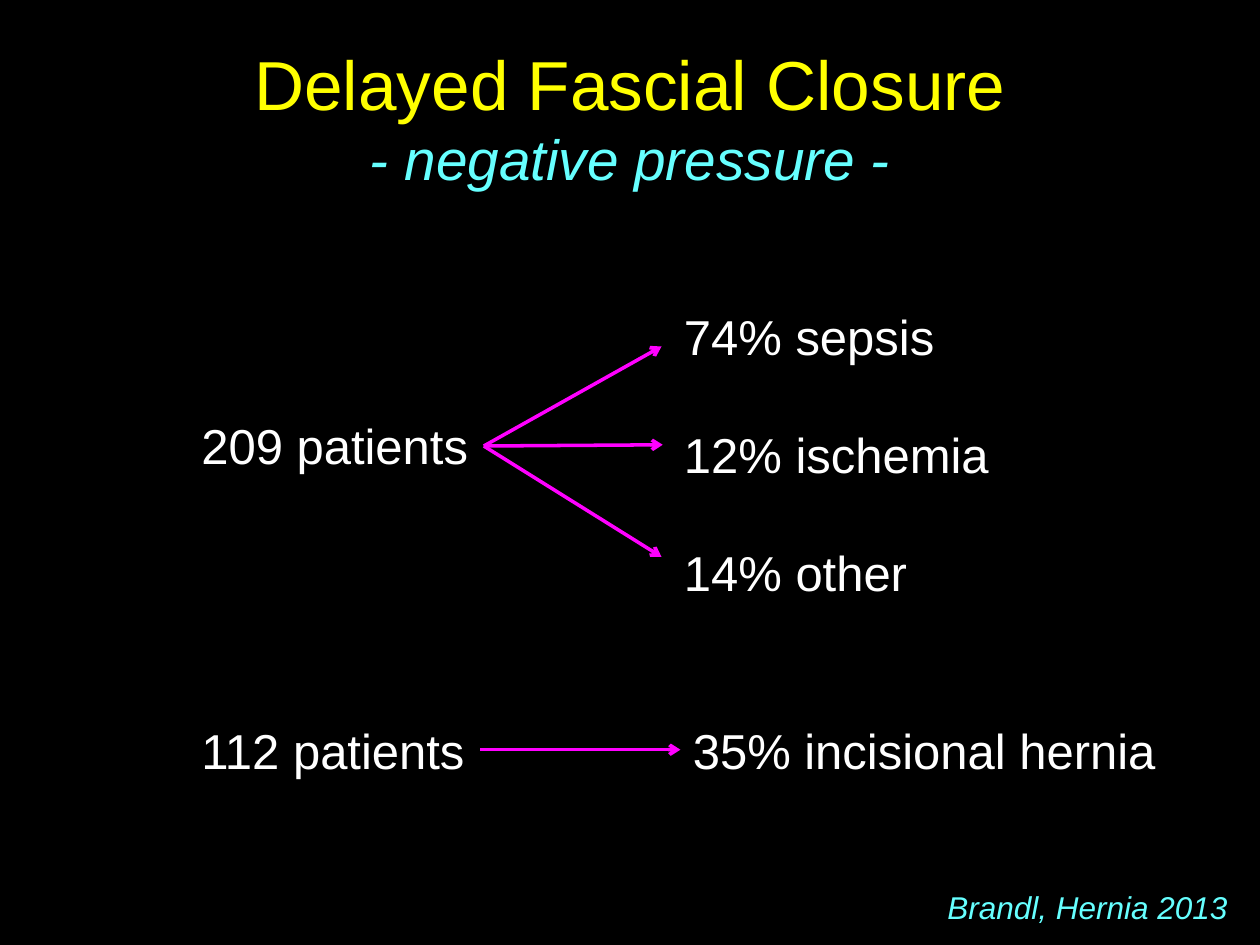
from lxml.etree import SubElement
from pptx import Presentation
from pptx.dml.color import RGBColor
from pptx.enum.shapes import MSO_CONNECTOR as Connector
from pptx.enum.text import MSO_ANCHOR as Anchor, PP_ALIGN as Align
from pptx.oxml.ns import qn
from pptx.util import Inches, Pt


def color(hex_value):
    return RGBColor.from_string(hex_value)


def add_text(area, paragraphs, wrap=False, anchor=Anchor.TOP, **para_format):
    """Add a text box; each paragraph is a list of lines (text, size, color, italic)."""
    box = slide.shapes.add_textbox(*map(Inches, area))
    frame = box.text_frame
    frame.word_wrap = wrap
    frame.vertical_anchor = anchor
    for index, lines in enumerate(paragraphs):
        para = frame.add_paragraph() if index else frame.paragraphs[0]
        for name, value in para_format.items():
            setattr(para, name, value)
        for number, (text, size, hex_value, italic) in enumerate(lines):
            if number:
                para.add_line_break()
            span = para.add_run()
            span.text = text
            font_format = {"name": "Arial", "size": Pt(size), "italic": italic}
            for name, value in font_format.items():
                setattr(span.font, name, value)
            span.font.color.rgb = color(hex_value)


YELLOW, CYAN, WHITE, MAGENTA = "FFFF00", "66FFFF", "FFFFFF", "FF00FF"

deck = Presentation()
deck.slide_width, deck.slide_height = Inches(10), Inches(7.5)
slide = deck.slides.add_slide(deck.slide_layouts[6])
slide.background.fill.solid()
slide.background.fill.fore_color.rgb = color("000000")

# Title and subtitle
title = [("Delayed Fascial Closure", 39.6, YELLOW, False),
         ("- negative pressure -", 32.4, CYAN, True)]
add_text((0.5, 0.3, 9, 1.25), [title], wrap=True, anchor=Anchor.MIDDLE,
         alignment=Align.CENTER)

# Patient groups and hernia outcome
labels = [
    ("209 patients", (1.5, 3.25, 2.34, 0.57)),
    ("112 patients", (1.5, 5.67, 2.31, 0.57)),
    ("35% incisional hernia", (5.4, 5.67, 3.91, 0.57)),
]
for text, area in labels:
    add_text(area, [[(text, 28, WHITE, False)]])

# Causes
causes = ["74% sepsis", "12% ischemia", "14% other"]
add_text((5.33, 1.92, 2.65, 2.85),
         [[(cause, 28, WHITE, False)] for cause in causes], line_spacing=2.0)

# Arrows from each patient group
fan_start = (3.84, 3.54)
arrows = [
    (fan_start, (5.25, 2.75)),
    (fan_start, (5.26, 3.53)),
    (fan_start, (5.25, 4.42)),
    ((3.81, 5.95), (5.4, 5.95)),
]
for start, end in arrows:
    arrow = slide.shapes.add_connector(Connector.STRAIGHT, *map(Inches, start + end))
    arrow.line.color.rgb = color(MAGENTA)
    arrow.line.width = Pt(2)
    SubElement(arrow.line._get_or_add_ln(), qn("a:tailEnd"), type="arrow")
    SubElement(arrow._element.spPr, qn("a:effectLst"))

# Citation
add_text((7.42, 7, 2.51, 0.4), [[("Brandl, Hernia 2013", 18, CYAN, True)]])

deck.save("out.pptx")
